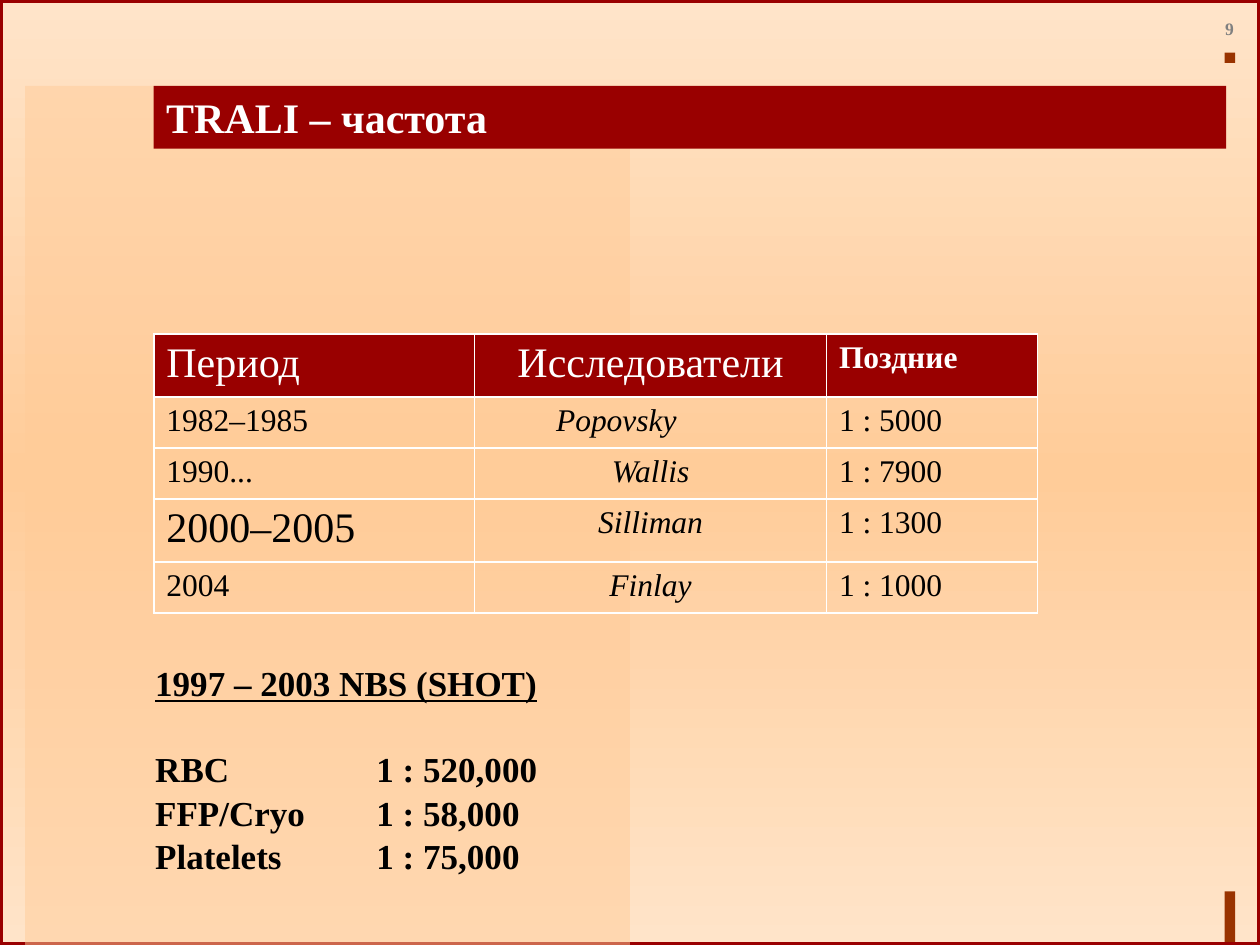
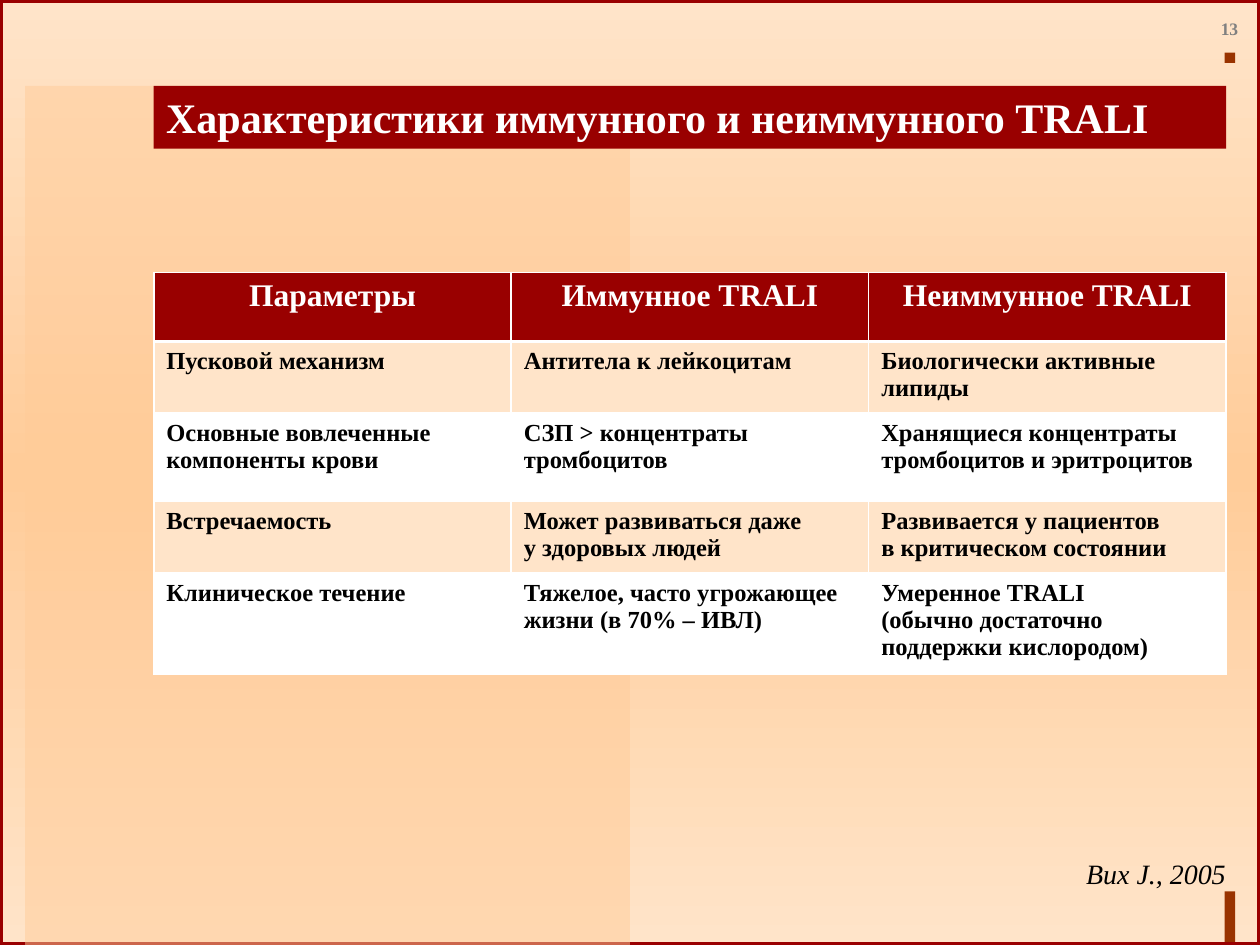
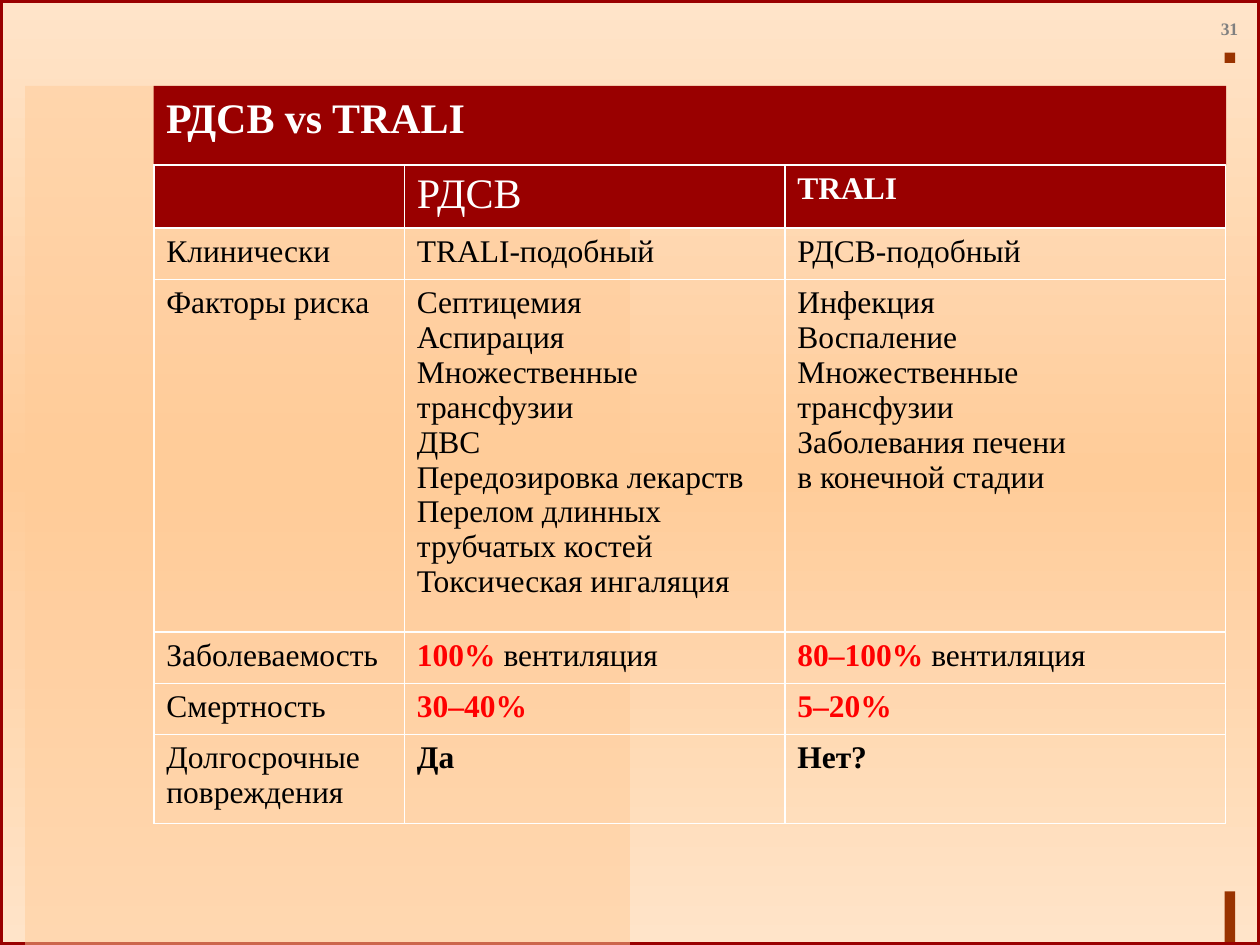
from copy import deepcopy
from dataclasses import dataclass

from lxml import etree
from pptx import Presentation
from pptx import util as u
from pptx.dml import color
from pptx.enum import shapes, text
from pptx.oxml import ns


@dataclass(frozen=True)
class Theme:
    """Colours, typeface and type sizes."""
    font: str = "Times New Roman"
    dark: str = "990000"
    accent: str = "993300"
    sand: str = "FFCC99"
    cream: str = "FFE4C9"
    white: str = "FFFFFF"
    black: str = "000000"
    grey: str = "808080"
    alert: str = "FF0000"
    title: int = 24
    note: int = 20
    table: int = 18
    source: int = 16
    small: int = 14
    number: int = 10


@dataclass(frozen=True)
class Box:
    """A rectangle in centimetres."""
    left: float
    top: float
    width: float
    height: float

    def lengths(self):
        """Return the four sides as lengths."""
        return [u.Cm(v) for v in (self.left, self.top, self.width, self.height)]


THEME = Theme()
PAGE = Box(0, 0, 25.4, 19.05)
TITLE = Box(3.1, 1.73, 21.62, 1.27)
CENTRE = text.PP_ALIGN.CENTER
RIGHT = text.PP_ALIGN.RIGHT


def rgb(value):
    """Turn a hex string into a colour."""
    return color.RGBColor.from_string(value)


def span(words, **style):
    """Pair words with the format that sets them apart."""
    return words, style


def add_words(para, words, size=THEME.table, colour=THEME.black, bold=False,
              italic=False, underline=False, align=None, before=0, after=0):
    """Add formatted words to a paragraph, breaking lines at vertical tabs."""
    para.alignment = align
    para.space_before, para.space_after = u.Pt(before), u.Pt(after)
    for index, line in enumerate(words.split("\v")):
        if index:
            para.add_line_break()
        run = para.add_run()
        run.text = line
        font = run.font
        font.name, font.size = THEME.font, u.Pt(size)
        font.bold, font.italic, font.underline = bold, italic, underline
        font.color.rgb = rgb(colour)


def write(frame, content, **style):
    """Fill a text frame with a string, a span or a list of spans."""
    if isinstance(content, str):
        content = span(content)
    spans = content if isinstance(content, list) else [content]
    para = frame.paragraphs[0]
    for words, extra in spans:
        for index, line in enumerate(words.split("\n")):
            if index:
                para = frame.add_paragraph()
            if line:
                add_words(para, line, **{**style, **extra})


def add_rect(page, box, fill=None, line=None, width=3, alpha=None):
    """Draw a flat rectangle."""
    rect = page.shapes.add_shape(shapes.MSO_SHAPE.RECTANGLE, *box.lengths())
    rect.shadow.inherit = False
    if fill:
        rect.fill.solid()
        rect.fill.fore_color.rgb = rgb(fill)
    else:
        rect.fill.background()
    if line:
        rect.line.color.rgb = rgb(line)
        rect.line.width = u.Pt(width)
    else:
        rect.line.fill.background()
    if alpha:
        tint = rect.element.spPr.find(".//" + ns.qn("a:srgbClr"))
        etree.SubElement(tint, ns.qn("a:alpha"), val=str(alpha * 1000))
    return rect


def add_text(page, box, content, anchor=text.MSO_ANCHOR.TOP, **style):
    """Place a text box without insets."""
    frame = page.shapes.add_textbox(*box.lengths()).text_frame
    frame.word_wrap = True
    frame.vertical_anchor = anchor
    frame.margin_left = frame.margin_right = 0
    frame.margin_top = frame.margin_bottom = 0
    write(frame, content, **style)
    return frame


def set_background(master):
    """Give the master its vertical three-stop gradient."""
    fill = master.background.fill
    fill.gradient()
    fill.gradient_angle = 90
    stops = master.element.find(".//" + ns.qn("a:gsLst"))
    stops.insert(1, deepcopy(stops[0]))
    shades = (THEME.cream, THEME.sand, THEME.cream)
    for stop, shade, position in zip(fill.gradient_stops, shades, (0, 0.5, 1)):
        stop.color.rgb = rgb(shade)
        stop.position = position


def add_page(deck, number, title, title_box=TITLE):
    """Add a page with its frame, panel, number and title band."""
    page = deck.slides.add_slide(deck.slide_layouts[6])
    mark = 0.21
    mark_left = TITLE.left + TITLE.width - 0.03
    add_rect(page, Box(mark_left, 17.97, mark, 1.07), THEME.accent)
    add_rect(page, Box(mark_left, 1.06, mark, mark), THEME.accent)
    add_rect(page, PAGE, line=THEME.dark)
    add_rect(page, Box(0.51, TITLE.top, PAGE.width / 2 - 0.51,
                       PAGE.height - TITLE.top), THEME.sand, alpha=50)
    add_text(page, Box(24.43, 0.33, 0.71, 0.51), str(number),
             text.MSO_ANCHOR.MIDDLE, size=THEME.number, colour=THEME.grey,
             bold=True, align=CENTRE)
    frame = add_rect(page, title_box, THEME.dark).text_frame
    frame.word_wrap = True
    frame.vertical_anchor = text.MSO_ANCHOR.TOP
    write(frame, title, size=THEME.title, colour=THEME.white, bold=True,
          align=text.PP_ALIGN.LEFT)
    return page


def set_borders(cell, top=1, bottom=1):
    """Draw white lines around a cell."""
    props = cell._tc.get_or_add_tcPr()
    sides = {"lnL": 1, "lnR": 1, "lnT": top, "lnB": bottom}
    for index, (side, width) in enumerate(sides.items()):
        line = etree.Element(ns.qn("a:" + side), w=str(u.Pt(width)))
        solid = etree.SubElement(line, ns.qn("a:solidFill"))
        etree.SubElement(solid, ns.qn("a:srgbClr"), val=THEME.white)
        props.insert(index, line)


def add_grid(page, left, top, widths, heights, rows, head, body,
             bands=(None,), rule=1):
    """Build a table with a dark header row and optional body bands."""
    box = Box(left, top, sum(widths), sum(heights))
    table = page.shapes.add_table(len(rows), len(widths), *box.lengths()).table
    table.first_row = table.horz_banding = False
    for column, width in zip(table.columns, widths):
        column.width = u.Cm(width)
    for r, (row, height) in enumerate(zip(rows, heights)):
        table.rows[r].height = u.Cm(height)
        fill = bands[(r - 1) % len(bands)] if r else THEME.dark
        for c, content in enumerate(row):
            cell = table.cell(r, c)
            if fill:
                cell.fill.solid()
                cell.fill.fore_color.rgb = rgb(fill)
            else:
                cell.fill.background()
            set_borders(cell, rule if r == 1 else 1, rule if r == 0 else 1)
            write(cell.text_frame, content, **(body if r else head))


def add_rates(page, box):
    """List the rate for each blood component at a shared tab stop."""
    frame = add_text(page, box, [
        span("1997 – 2003 NBS (SHOT)\n", underline=True, after=25),
        span("RBC\t1 : 520,000\nFFP/Cryo\t1 : 58,000\nPlatelets\t1 : 75,000",
             after=1)], size=THEME.note, bold=True)
    for para in frame.paragraphs[1:]:
        stops = etree.SubElement(para._p.get_or_add_pPr(), ns.qn("a:tabLst"))
        etree.SubElement(stops, ns.qn("a:tab"), pos=str(u.Cm(4.46)), algn="l")


def build_frequency(deck):
    """Build the page on how often TRALI occurs."""
    page = add_page(deck, 9, "TRALI – частота")

    def author(name):
        return span(name, italic=True, align=CENTRE)

    rows = [
        [span("Период", size=THEME.title),
         span("Исследователи", size=THEME.title, align=CENTRE),
         span("Поздние", bold=True)],
        ["1982–1985", author("Popovsky \t"), "1 : 5000"],
        ["1990...", author("Wallis"), "1 : 7900"],
        [span("2000–2005", size=THEME.title), author("Silliman"), "1 : 1300"],
        ["2004", author("Finlay"), "1 : 1000"],
    ]
    add_grid(page, TITLE.left, 6.73, [6.47, 7.09, 4.25],
             [1.27, 1.03, 1.03, 1.27, 1.03], rows,
             head={"colour": THEME.white}, body={})
    add_rates(page, Box(3.13, 13.34, 10, 4.85))


def build_comparison(deck):
    """Build the page that sets immune against non-immune TRALI."""
    page = add_page(deck, 13, "Характеристики иммунного и неиммунного TRALI")
    add_text(page, Box(21.31, 17.27, 3.4, 0.71), "Bux J., 2005",
             size=THEME.source, italic=True, align=RIGHT)
    rows = [
        ["Параметры", "Иммунное TRALI", "Неиммунное TRALI"],
        ["Пусковой механизм", "Антитела к лейкоцитам",
         "Биологически активные липиды"],
        ["Основные вовлеченные компоненты крови",
         "СЗП > концентраты тромбоцитов",
         "Хранящиеся концентраты тромбоцитов и эритроцитов"],
        ["Встречаемость", "Может развиваться даже\vу здоровых людей",
         "Развивается у пациентов\vв критическом состоянии"],
        ["Клиническое течение",
         "Тяжелое, часто угрожающее жизни (в 70% – ИВЛ)",
         "Умеренное TRALI\v(обычно достаточно поддержки кислородом)"],
    ]
    add_grid(page, TITLE.left, 5.49, [TITLE.width / 3] * 3,
             [1.4, 1.43, 1.78, 1.43, 2.03], rows,
             head={"colour": THEME.white, "bold": True, "align": CENTRE},
             body={"size": THEME.small, "bold": True},
             bands=(THEME.cream, THEME.white), rule=2)


def build_versus(deck):
    """Build the page that sets the distress syndrome against TRALI."""
    table_top = 3.33
    band = Box(TITLE.left, TITLE.top, TITLE.width, table_top - TITLE.top)
    page = add_page(deck, 31, "РДСВ vs TRALI", band)

    def rate(words):
        return span(words, colour=THEME.alert, bold=True)

    ventilation = span("вентиляция")
    rows = [
        ["", span("РДСВ", size=THEME.title), span("TRALI", bold=True)],
        ["Клинически", "TRALI-подобный", "РДСВ-подобный"],
        ["Факторы риска",
         "Септицемия\nАспирация\nМножественные трансфузии\nДВС\n"
         "Передозировка лекарств\vПерелом длинных\vтрубчатых костей\n"
         "Токсическая ингаляция",
         "Инфекция\nВоспаление\nМножественные\vтрансфузии\n"
         "Заболевания печени\vв конечной стадии"],
        ["Заболеваемость", [rate("100% "), ventilation],
         [rate("80‒100% "), ventilation]],
        ["Смертность", rate("30‒40%"), rate("5‒20%")],
        ["Долгосрочные повреждения", span("Да", bold=True),
         span("Нет?", bold=True)],
    ]
    add_grid(page, TITLE.left, table_top, [5.05, 7.67, 8.88],
             [1.27, 1.03, 7.11, 1.03, 1.03, 1.8], rows,
             head={"colour": THEME.white}, body={})


def main():
    """Build and save the deck."""
    deck = Presentation()
    deck.slide_width, deck.slide_height = u.Cm(PAGE.width), u.Cm(PAGE.height)
    set_background(deck.slide_master)
    for build in (build_frequency, build_comparison, build_versus):
        build(deck)
    deck.save("out.pptx")


if __name__ == "__main__":
    main()
